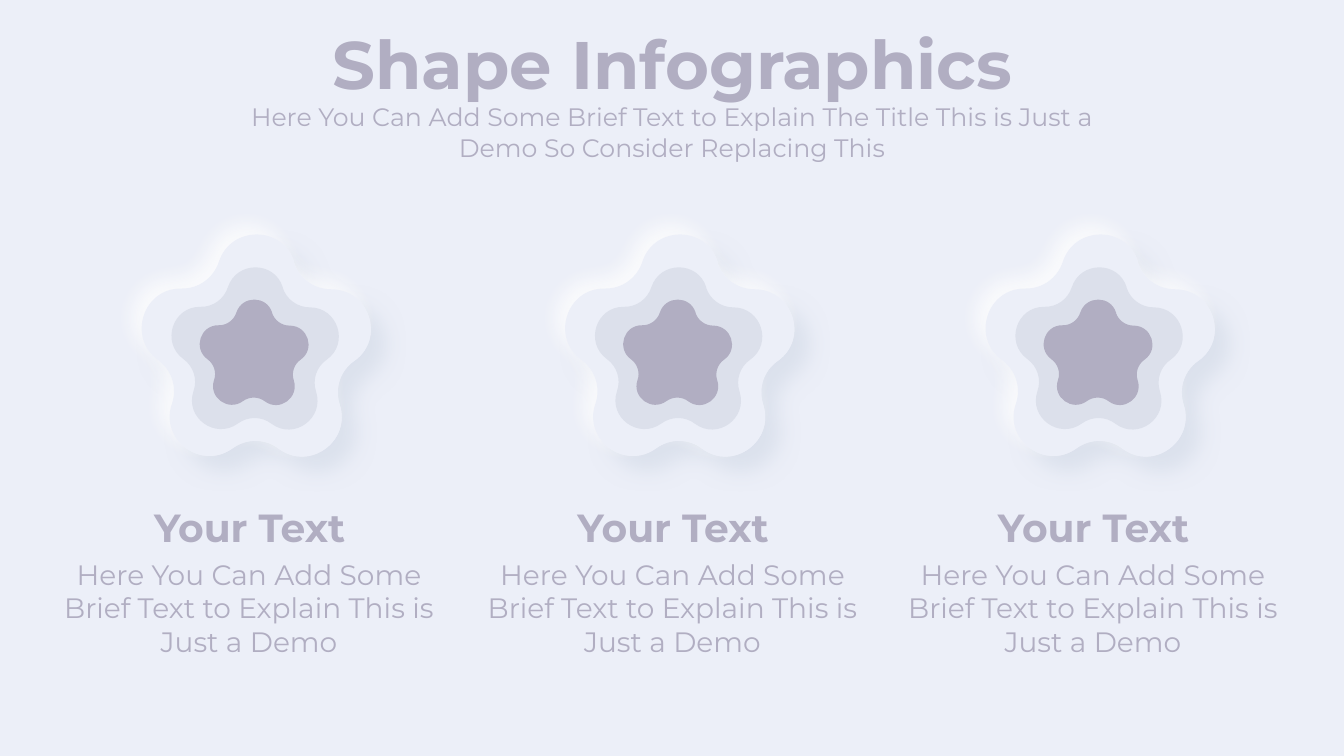
import math

from lxml import etree
from pptx import Presentation
from pptx.dml.color import RGBColor
from pptx.enum import text
from pptx.oxml import ns
from pptx.util import Inches, Pt

PALE, GREY, MAUVE = "ECEFF8", "DCE0EB", "B1AEC2"

# One fifth of the star around its centre: a notch, then a lobe
START = (0.375, -0.9)
FIFTH = [
    [(0.425, -0.74), (0.575, -0.63), (0.745, -0.63)],
    [(1.125, -0.63), (1.285, -0.14), (0.975, 0.08)],
]
# Frame of a star around its centre: left, top, width, height
FRAME = (-1.14, -1.18, 2.28, 2.21)


def paint(color, value):
    color.rgb = RGBColor.from_string(value)


def place(x, y, scale, point, turn=0):
    angle = math.radians(72 * turn)
    cos, sin = math.cos(angle), math.sin(angle)
    dx, dy = point
    return (Inches(x + scale * (dx * cos - dy * sin)),
            Inches(y + scale * (dx * sin + dy * cos)))


def add_star(slide, x, y, scale, fill):
    first = place(x, y, scale, START)
    curves = [[place(x, y, scale, point, turn) for point in curve]
              for turn in range(5) for curve in FIFTH]
    pen = slide.shapes.build_freeform(*first)
    pen.add_line_segments([curve[-1] for curve in curves], close=True)
    star = pen.convert_to_shape()
    star.left, star.top = place(x, y, scale, FRAME[:2])
    star.width, star.height = (Inches(scale * side) for side in FRAME[2:])
    bend(star, first, curves)
    star.fill.solid()
    paint(star.fill.fore_color, fill)
    star.line.fill.background()
    star.shadow.inherit = False
    return star


def bend(star, first, curves):
    """Turn the straight sides into Bezier curves within the star's frame."""
    track = next(star._element.iter(ns.qn("a:path")))
    track.set("w", str(star.width))
    track.set("h", str(star.height))
    for part in list(track):
        track.remove(part)
    for tag, points in [("moveTo", [first])] + [("cubicBezTo", c) for c in curves]:
        part = etree.SubElement(track, ns.qn("a:" + tag))
        for px, py in points:
            etree.SubElement(part, ns.qn("a:pt"),
                             x=str(px - star.left), y=str(py - star.top))
    etree.SubElement(track, ns.qn("a:close"))


def cast(shape, color, alpha, blur, dist, angle):
    """Give the shape an outer shadow; lengths are in points."""
    effects = shape._element.spPr.find(ns.qn("a:effectLst"))
    shade = etree.SubElement(
        effects, ns.qn("a:outerShdw"), blurRad=str(Pt(blur)), dist=str(Pt(dist)),
        dir=str(angle * 60000), algn="ctr", rotWithShape="0")
    tint = etree.SubElement(shade, ns.qn("a:srgbClr"), val=color)
    etree.SubElement(tint, ns.qn("a:alpha"), val=str(alpha * 1000))


def add_text(slide, box, words, size, bold=False):
    frame = slide.shapes.add_textbox(*map(Inches, box)).text_frame
    frame.word_wrap = True
    frame.auto_size = text.MSO_AUTO_SIZE.SHAPE_TO_FIT_TEXT
    line = frame.paragraphs[0]
    line.text = words
    line.alignment = text.PP_ALIGN.CENTER
    line.font.name = "Montserrat"
    line.font.size = Pt(size)
    line.font.bold = bold
    paint(line.font.color, MAUVE)


def add_header(slide, left, top):
    add_text(slide, (left + 0.48, top, 7.78, 0.91), "Shape Infographics", 48, True)
    add_text(slide, (left, top + 0.79, 8.73, 0.71),
             "Here You Can Add Some Brief Text to Explain The Title "
             "This is Just a Demo So Consider Replacing This", 18)


def add_column(slide, left, top):
    x, y = left + 2.24, top + 1.2
    # Raised base: a dark shadow below right, a light one above left
    base = []
    for shadow in (("D1D9E6", 60, 15, 15, 45), ("FFFFFF", 80, 15, 10, 225)):
        star = add_star(slide, x, y, 1, PALE)
        cast(star, *shadow)
        base.append(star)
    slide.shapes.add_group_shape(base)
    # Inner stars
    add_star(slide, x - 0.01, y + 0.01, 0.73, GREY)
    add_star(slide, x - 0.02, y + 0.03, 0.475, MAUVE)
    # Caption
    add_text(slide, (left, top + 2.64, 4.35, 0.57), "Your Text", 28, True)
    add_text(slide, (left, top + 3.18, 4.34, 1.11),
             "Here You Can Add Some Brief Text to Explain This is Just a Demo", 20)


def main():
    deck = Presentation()
    deck.slide_width, deck.slide_height = Inches(13.33), Inches(7.5)
    slide = deck.slides.add_slide(deck.slide_layouts[6])
    slide.background.fill.solid()
    paint(slide.background.fill.fore_color, PALE)
    add_header(slide, 2.3, 0.17)
    for left in (0.3, 4.5, 8.67):
        add_column(slide, left, 2.3)
    deck.save("out.pptx")


if __name__ == "__main__":
    main()
